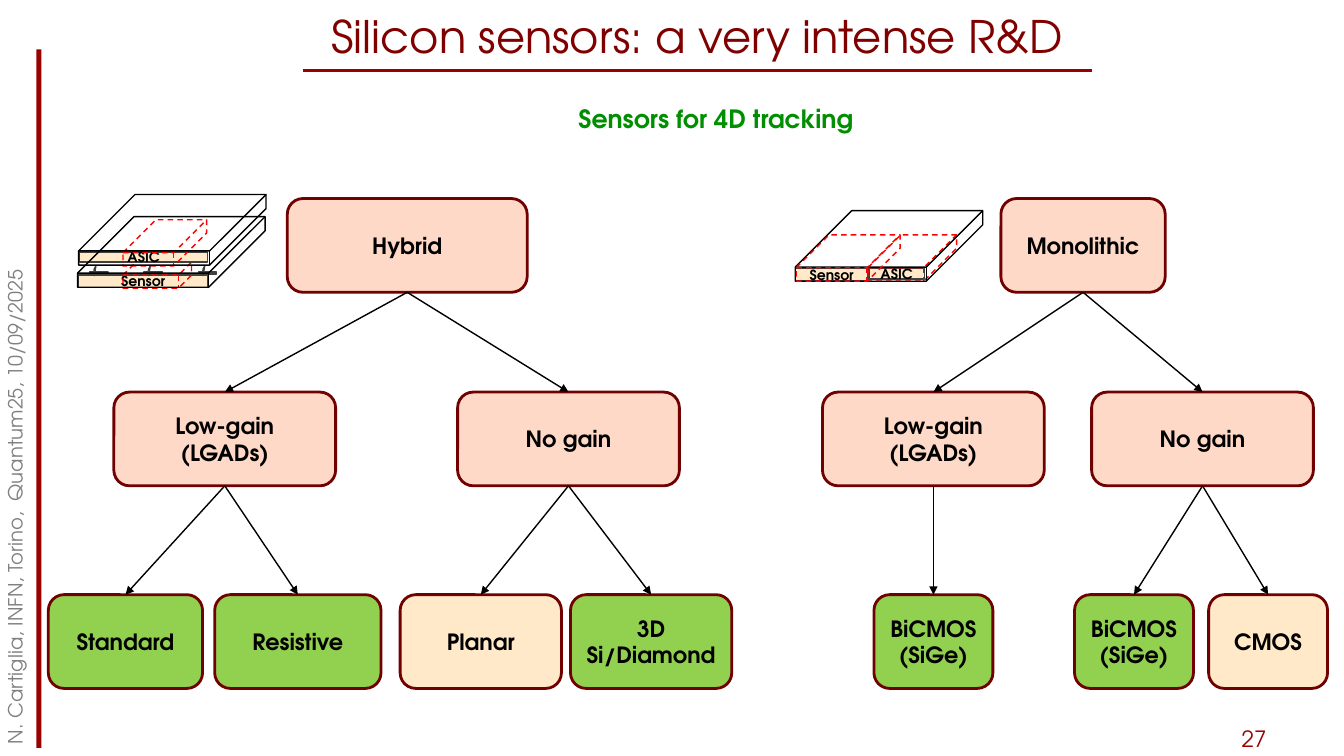
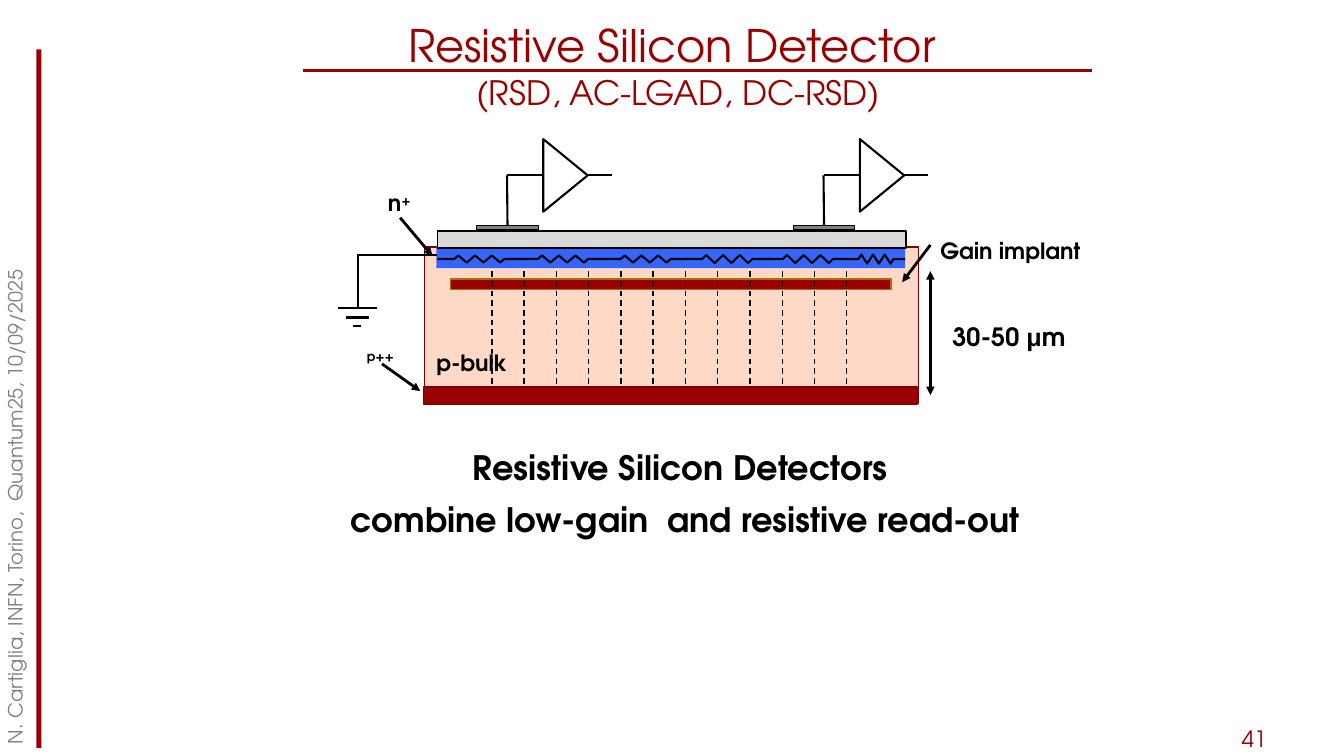
from pptx import Presentation
from pptx.dml.color import RGBColor
from pptx.enum.dml import MSO_LINE
from pptx.enum.shapes import MSO_CONNECTOR, MSO_SHAPE as Preset
from pptx.enum.text import MSO_ANCHOR as Anchor, MSO_AUTO_SIZE as Fit, PP_ALIGN as Align
from pptx.oxml.ns import qn
from pptx.util import Inches, Pt
from lxml import etree
from dataclasses import dataclass


@dataclass(frozen=True)
class Theme:
    font: str = "TeX Gyre Adventor"
    symbol_font: str = "Arial"
    red: str = "990000"
    maroon: str = "800000"
    border: str = "710000"
    gray: str = "808080"
    silver: str = "D9D9D9"
    ball: str = "CCCCCC"
    pad: str = "A4A4A4"
    edge: str = "404040"
    black: str = "000000"
    white: str = "FFFFFF"
    green: str = "008F00"
    lime: str = "92D050"
    peach: str = "FFD9C8"
    cream: str = "FFE9C8"
    blue: str = "3366FF"
    bronze: str = "B06B00"
    guide: str = "FF0000"
    title: int = 32
    large: int = 24
    medium: int = 18
    body: int = 16
    footer: int = 14
    tiny: int = 10


T = Theme()
CELL = 0.1
COLUMNS, ROWS = 133.33, 75

FOOTER = "N. Cartiglia, INFN, Torino,  Quantum25, 10/09/2025"
RESEARCH_TITLE = ["Silicon sensors: a very intense R&D"]
DETECTOR_TITLE = [[("Resistive Silicon Detector ", {}), ("\n", {}),
                   ("(RSD, AC-LGAD, DC-RSD)", {"size": T.large})]]
MESSAGE = ["Resistive Silicon Detectors ", "combine low-gain  and resistive read-out"]

LEVELS, NODE_HEIGHT = (19.7, 38.9, 59), 9.3
SIGE = ["BiCMOS", "(SiGe)"]
LGAD = ["Low-gain (LGADs)"]
TREES = [
    (["Hybrid"], 28.5, 23.8, T.peach, [
        (LGAD, 11.3, 22, T.peach, [
            (["Standard"], 4.8, 15.3, T.lime, []),
            (["Resistive"], 21.3, 16.5, T.lime, [])]),
        (["No gain"], 45.4, 22, T.peach, [
            (["Planar"], 39.7, 16, T.cream, []),
            (["3D", "Si/Diamond"], 56.6, 16, T.lime, [])])]),
    (["Monolithic"], 99.3, 16.3, T.peach, [
        (LGAD, 81.6, 22, T.peach, [
            (SIGE, 86.7, 11.8, T.lime, [])]),
        (["No gain"], 108.3, 22, T.peach, [
            (SIGE, 106.6, 11.8, T.lime, []),
            (["CMOS"], 119.9, 11.8, T.cream, [])])]),
]

SENSOR_LAYER = (7.8, 27.3, 12.8, 1.2)
BUMPS = (8.9, 14.3, 19.7)
ASIC_LAYER = (7.9, 25, 12.7, 1)
HYBRID_CUBES = [((12.2, 21.8, 8.3, 4.6), 0.71, True),
                ((7.8, 19.3, 18.6, 7), 0.8, False),
                ((7.7, 21.5, 18.6, 7), 0.8, False)]
MONOLITHIC_LAYERS = [("Sensor", (78.9, 26.6, 7.2, 1.3)),
                     ("ASIC", (86.2, 26.6, 5.5, 1.1))]
MONOLITHIC_CUBES = [((86.1, 23.3, 8.8, 4.6), 0.71, True),
                    ((78.9, 20.9, 18.6, 7), 0.8, False),
                    ((79, 23.3, 10.3, 4.6), 0.71, True)]

DETECTOR_LAYERS = [((42.1, 24.5, 49, 15.5), T.peach, T.maroon),
                   ((42, 38.4, 49, 1.7), T.red, T.maroon),
                   ((43.3, 24.5, 46.5, 2.1), T.blue, None)]
GROUND = [((35.4, 25.3), (43.4, 25.3)), ((35.5, 25.3), (35.5, 30.6)),
          ((33.5, 30.6), (37.4, 30.6)), ((34.3, 31.5), (36.6, 31.5)),
          ((35, 32.3), (35.8, 32.3))]
RESISTORS = [(43.4, 8.3, 0.35), (51.7, 8.3, 0.35), (59.9, 8.3, 0.35),
             (68, 8.3, 0.4), (76, 8.3, 0.4), (84, 5.8, 0.45)]
ZIGZAG = [(0, 0), (0.2, 0), (0.25, -1), (0.35, 1), (0.45, -1), (0.55, 1),
          (0.65, -1), (0.75, 1), (0.8, 0), (1, 0)]
AMPLIFIERS = (81.7, 50.3)
FIELD_LINES, FIELD_START, FIELD_STEP = 12, 48.8, 3.2
LABELS = [
    ((42.3, 33.3, 9.1, 4.1), "p-bulk", T.body),
    ((37.5, 17.5, 4.3, 4.1), [("n", {}), ("+", {"raised": True})], T.body),
    ((35.4, 33, 5.2, 3.1), [("p++", {"raised": True})], T.body),
    ((92.3, 22.2, 16.1, 4.1), "Gain implant", T.body),
    ((93.5, 30.5, 13.3, 4.5),
     [("30-50 ", {}), ("μ", {"name": T.symbol_font}), ("m", {})], T.medium),
]
POINTERS = [((39.7, 21.6), (42.9, 25.4), ("tail",)),
            ((37.9, 36.1), (41.7, 38.8), ("tail",)),
            ((92.3, 24.3), (89.5, 28), ("tail",)),
            ((92.3, 26.9), (92.3, 39.2), ("head", "tail"))]


def cells(values):
    return [Inches(value * CELL) for value in values]


def assign(target, values):
    for key, value in values.items():
        setattr(target, key, value)


def write(shape, paragraphs, size, color=T.black, bold=False, align=Align.CENTER,
          anchor=Anchor.MIDDLE, spacing=None, wrap=True, fit=Fit.NONE, margins=(0.1, 0.05)):
    side, edge = map(Inches, margins)
    frame = shape.text_frame
    assign(frame, {"word_wrap": wrap, "auto_size": fit, "vertical_anchor": anchor,
                   "margin_left": side, "margin_right": side,
                   "margin_top": edge, "margin_bottom": edge})
    for index, content in enumerate(paragraphs):
        paragraph = frame.add_paragraph() if index else frame.paragraphs[0]
        assign(paragraph, {"alignment": align, "line_spacing": spacing})
        for text, changes in [(content, {})] if isinstance(content, str) else content:
            if text == "\n":
                paragraph.add_line_break()
                continue
            run = paragraph.add_run()
            run.text = text
            assign(run.font, {"name": changes.get("name", T.font), "bold": bold,
                              "size": Pt(changes.get("size", size))})
            run.font.color.rgb = RGBColor.from_string(color)
            if changes.get("raised"):
                run.font._element.set("baseline", "30000")


def label(slide, box, paragraphs, size, **style):
    area = slide.shapes.add_textbox(*cells(box))
    write(area, paragraphs, size, **style)
    return area


def paint(shape, fill=None, line=None, width=1, dashed=False):
    shape.shadow.inherit = False
    if fill:
        shape.fill.solid()
        shape.fill.fore_color.rgb = RGBColor.from_string(fill)
    else:
        shape.fill.background()
    if line:
        stroke(shape.line, line, width, dashed)
    else:
        shape.line.fill.background()


def stroke(line, color, width, dashed=False):
    line.color.rgb = RGBColor.from_string(color)
    line.width = Pt(width)
    if dashed:
        line.dash_style = MSO_LINE.DASH


def draw(slide, preset, box, fill=None, line=None, width=1, dashed=False,
         rotation=0, adjust=()):
    shape = slide.shapes.add_shape(preset, *cells(box))
    paint(shape, fill, line, width, dashed)
    shape.rotation = rotation
    for index, value in enumerate(adjust):
        shape.adjustments[index] = value
    return shape


def connect(slide, start, end, color=T.black, width=1.0, dashed=False, arrows=()):
    link = slide.shapes.add_connector(MSO_CONNECTOR.STRAIGHT, *cells(start + end))
    stroke(link.line, color, width, dashed)
    outline = link.line._get_or_add_ln()
    for side in arrows:
        etree.SubElement(outline, qn(f"a:{side}End"), type="triangle")
    etree.SubElement(link._element.spPr, qn("a:effectLst"))
    return link


def new_slide(deck, number):
    slide = deck.slides.add_slide(deck.slide_layouts[6])
    draw(slide, Preset.RECTANGLE, (3.6, 4.9, 0.5, 69.3), T.red)
    connect(slide, (30.1, 7), (108.3, 7), T.red, 2)
    label(slide, (122.2, 71.5, 8.1, 3.5), [number], T.body, color=T.red, align=Align.LEFT)
    footer = label(slide, (-33.9, 37.3, 71.2, 3.8), [FOOTER], T.footer, color=T.gray,
                   align=Align.LEFT, anchor=Anchor.TOP)
    footer.rotation = 270
    return slide


def grow(slide, branch, level=0):
    text, left, width, fill, children = branch
    node = draw(slide, Preset.ROUNDED_RECTANGLE, (left, LEVELS[level], width, NODE_HEIGHT),
                fill, T.border, 2)
    write(node, text, T.body, bold=True, margins=(width * CELL * 0.06, 0.05))
    for child in children:
        target = grow(slide, child, level + 1)
        link = connect(slide, (0, 0), (1, 1), arrows=("tail",))
        link.begin_connect(node, 2)
        link.end_connect(target, 0)
    return node


def draw_layer(slide, text, box):
    layer = draw(slide, Preset.RECTANGLE, box, T.cream, T.edge)
    write(layer, [text], T.tiny, bold=True, margins=(0, 0))


def draw_cube(slide, box, depth, dashed):
    draw(slide, Preset.CUBE, box, None, T.guide if dashed else T.black,
         dashed=dashed, adjust=(depth,))


def build_research(deck):
    slide = new_slide(deck, "27")
    label(slide, (4.6, 0, 129.2, 7), RESEARCH_TITLE, T.title, color=T.maroon)
    label(slide, (56.4, 8.9, 29.4, 4.5), ["Sensors for 4D tracking"], T.medium,
          color=T.green, bold=True, align=Align.LEFT, anchor=Anchor.TOP,
          spacing=1.3, wrap=False, fit=Fit.SHAPE_TO_FIT_TEXT)
    for tree in TREES:
        grow(slide, tree)

    draw_layer(slide, "Sensor", SENSOR_LAYER)
    for left in BUMPS:
        draw(slide, Preset.RECTANGLE, (left, 27, 1.8, 0.2), T.pad, T.edge)
        draw(slide, Preset.CHORD, (left + 0.1, 26.6, 1.5, 0.9), T.ball, T.edge,
             rotation=87.3, adjust=(56.1 * 0.6, 162 * 0.6))
    draw_cube(slide, (12.2, 26, 6.8, 2.6), 0.5, True)
    draw_layer(slide, "ASIC", ASIC_LAYER)
    for cube in HYBRID_CUBES:
        draw_cube(slide, *cube)
    for layer in MONOLITHIC_LAYERS:
        draw_layer(slide, *layer)
    for cube in MONOLITHIC_CUBES:
        draw_cube(slide, *cube)


def draw_resistor(slide, left, width, height):
    points = [tuple(cells((left + x * width, 25.7 + y * height))) for x, y in ZIGZAG]
    outline = slide.shapes.build_freeform(*points[0], scale=1.0)
    outline.add_line_segments(points[1:], close=False)
    paint(outline.convert_to_shape(), None, T.black, 1.5)


def draw_amplifier(slide, lead):
    pad = draw(slide, Preset.RECTANGLE, (lead - 3, 22.35, 6.1, 0.4), T.gray, T.black)
    connect(slide, (lead, 17.4), (lead + 10.4, 17.4), width=1.5)
    draw(slide, Preset.ISOSCELES_TRIANGLE, (lead + 2.2, 15.2, 7.2, 4.4), T.white,
         T.black, 1.5, rotation=90)
    connect(slide, (lead, 17.4), (lead, 22.35), width=1.5).end_connect(pad, 0)


def build_detector(deck):
    slide = new_slide(deck, "41")
    label(slide, (1.3, 1.3, 132, 7.3), DETECTOR_TITLE, T.title, color=T.red,
          anchor=Anchor.TOP)
    label(slide, (11, 42.6, 113.9, 16.2), MESSAGE, T.large, bold=True,
          anchor=Anchor.TOP, spacing=1.3)
    for box, fill, line in DETECTOR_LAYERS:
        draw(slide, Preset.RECTANGLE, box, fill, line)
    for start, end in GROUND:
        connect(slide, start, end, width=1.5)
    for resistor in RESISTORS:
        draw_resistor(slide, *resistor)
    for lead in AMPLIFIERS:
        draw_amplifier(slide, lead)
    draw(slide, Preset.RECTANGLE, (44.7, 27.7, 43.7, 1), T.red, T.bronze)
    for index in range(FIELD_LINES):
        column = FIELD_START + index * FIELD_STEP
        connect(slide, (column, 26.9), (column, 38.3), dashed=True)
    for box, content, size in LABELS:
        label(slide, box, [content], size, bold=True, align=Align.LEFT,
              anchor=Anchor.TOP, spacing=1.3, wrap=False, fit=Fit.SHAPE_TO_FIT_TEXT)
    for start, end, arrows in POINTERS:
        connect(slide, start, end, width=2, arrows=arrows)
    draw(slide, Preset.RECTANGLE, (43.4, 22.9, 46.5, 1.7), T.silver, T.black)


def main():
    deck = Presentation()
    deck.slide_width, deck.slide_height = cells((COLUMNS, ROWS))
    build_research(deck)
    build_detector(deck)
    deck.save("out.pptx")


if __name__ == "__main__":
    main()
